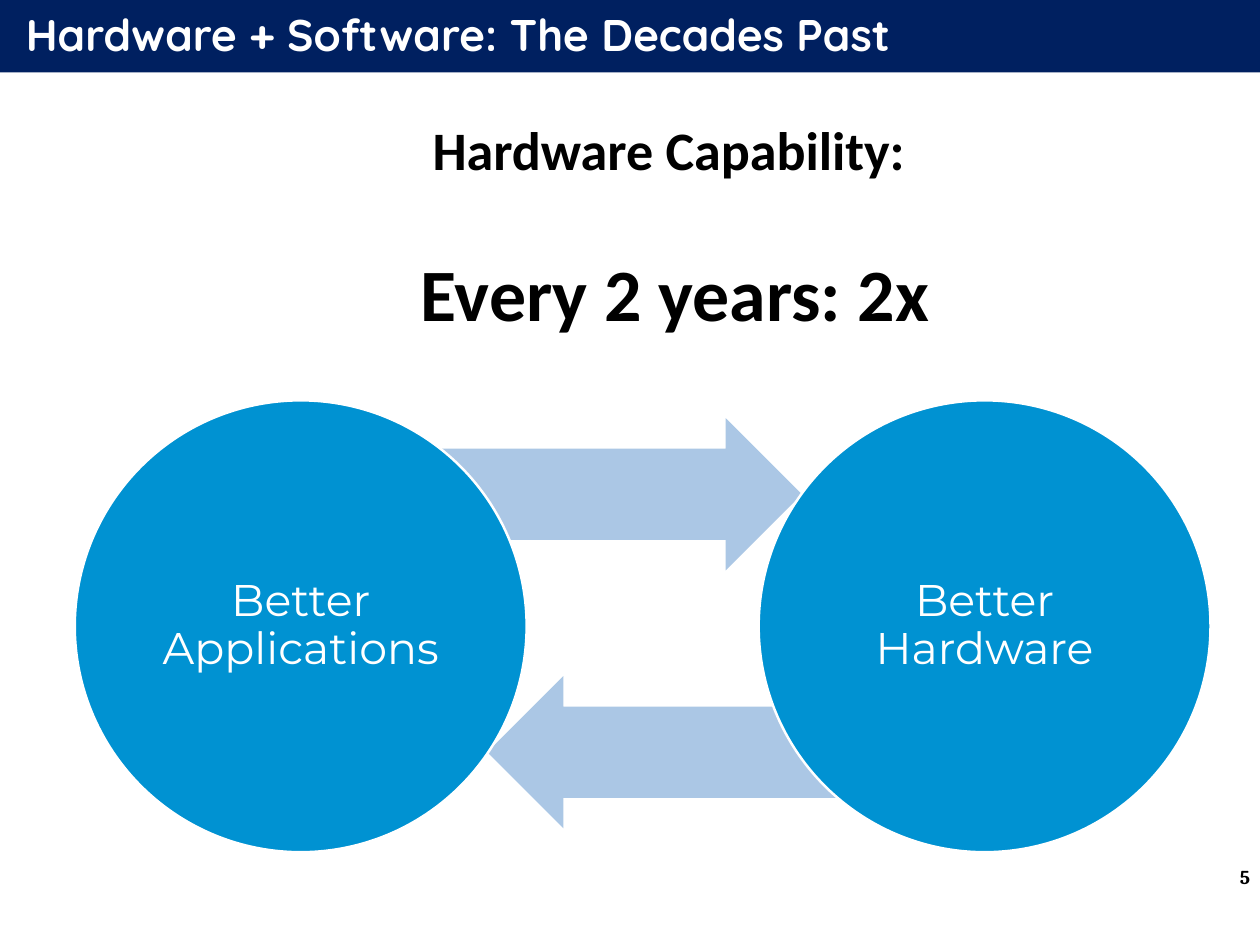
from dataclasses import dataclass

from pptx import Presentation
from pptx.dml.color import RGBColor
from pptx.enum.shapes import MSO_SHAPE
from pptx.enum.text import MSO_ANCHOR, MSO_AUTO_SIZE, PP_ALIGN
from pptx.shapes.autoshape import Shape
from pptx.slide import Slide
from pptx.util import Pt

RECT, OVAL, ARROW = MSO_SHAPE.RECTANGLE, MSO_SHAPE.OVAL, MSO_SHAPE.RIGHT_ARROW
LEFT, CENTER, RIGHT = PP_ALIGN.LEFT, PP_ALIGN.CENTER, PP_ALIGN.RIGHT
MIDDLE = MSO_ANCHOR.MIDDLE
GROW = MSO_AUTO_SIZE.SHAPE_TO_FIT_TEXT


@dataclass(frozen=True)
class Font:
    name: str
    size: float
    color: str
    bold: bool = True


@dataclass(frozen=True)
class Theme:
    navy: str = "002060"
    blue: str = "0092D2"
    pale: str = "ABC7E5"
    white: str = "FFFFFF"
    title: Font = Font("Quicksand", 36, "FFFFFF")
    label: Font = Font("Montserrat", 36, "FFFFFF", False)
    head: Font = Font("Calibri", 44, "000000")
    claim: Font = Font("Calibri", 60, "000000")
    number: Font = Font("Cambria", 16, "000000")


@dataclass(frozen=True)
class Box:
    left: float
    top: float
    width: float
    height: float

    def lengths(self) -> list[Pt]:
        return [Pt(v) for v in (self.left, self.top, self.width, self.height)]


@dataclass(frozen=True)
class Stage:
    text: str
    left: float


@dataclass(frozen=True)
class Flow:
    box: Box
    turn: float


THEME = Theme()
STAGES = [Stage("Better Applications", 60.8), Stage("Better Hardware", 616.6)]
FLOWS = [
    Flow(Box(283.7, 339.8, 367.9, 123.8), 0),
    Flow(Box(396, 549.4, 325.4, 123.8), 180),
]
RING_TOP, RING_SIZE = 325.4, 367.2


def add_solid(slide: Slide, kind: MSO_SHAPE, box: Box, color: str) -> Shape:
    """Add a filled preset shape without outline or shadow."""
    shape = slide.shapes.add_shape(kind, *box.lengths())
    shape.shadow.inherit = False
    shape.fill.solid()
    shape.fill.fore_color.rgb = RGBColor.from_string(color)
    shape.line.fill.background()
    return shape


def write(shape: Shape, lines: list[str], fonts: list[Font], align: PP_ALIGN) -> None:
    """Set one paragraph per line, each in its own font."""
    frame = shape.text_frame
    frame.text = "\n".join(lines)
    frame.vertical_anchor = MIDDLE
    for para, style in zip(frame.paragraphs, fonts):
        para.alignment = align
        for run in para.runs:
            font = run.font
            font.name, font.size, font.bold = style.name, Pt(style.size), style.bold
            font.color.rgb = RGBColor.from_string(style.color)


def set_insets(shape: Shape, side: float, left: float) -> None:
    frame = shape.text_frame
    frame.margin_left = Pt(left)
    frame.margin_top = frame.margin_right = frame.margin_bottom = Pt(side)


def add_flow(slide: Slide, flow: Flow) -> None:
    arrow = add_solid(slide, ARROW, flow.box, THEME.pale)
    arrow.adjustments[0], arrow.adjustments[1] = 0.6, 0.5
    arrow.rotation = flow.turn


def add_title(slide: Slide, text: str) -> None:
    bar = add_solid(slide, RECT, Box(0, -4.3, 1024, 63.2), THEME.navy)
    set_insets(bar, 0, 21)
    bar.text_frame.word_wrap = True
    write(bar, [text], [THEME.title], LEFT)


def add_stage(slide: Slide, stage: Stage) -> None:
    box = Box(stage.left, RING_TOP, RING_SIZE, RING_SIZE)
    ring = add_solid(slide, OVAL, box, THEME.blue)
    ring.line.color.rgb = RGBColor.from_string(THEME.white)
    ring.line.width = Pt(2)
    set_insets(ring, 3.6, 3.6)
    ring.text_frame.word_wrap = True
    write(ring, [stage.text], [THEME.label], CENTER)
    ring.text_frame.paragraphs[0].line_spacing = 0.9


def add_number(slide: Slide, text: str) -> None:
    box = slide.shapes.add_textbox(*Box(784, 692, 239, 41).lengths())
    box.text_frame.word_wrap = True
    write(box, [text], [THEME.number], RIGHT)


def add_claim(slide: Slide) -> None:
    box = slide.shapes.add_textbox(*Box(293.8, 91.4, 509.8, 186.5).lengths())
    lines = ["Hardware Capability: ", "Every 2 years: 2x"]
    write(box, lines, [THEME.head, THEME.claim], CENTER)
    frame = box.text_frame
    frame.word_wrap = False
    frame.auto_size = GROW
    frame.vertical_anchor = MSO_ANCHOR.TOP
    frame.paragraphs[1].space_before = Pt(53.7)


def main() -> None:
    deck = Presentation()
    deck.slide_width, deck.slide_height = Pt(1024), Pt(768)
    slide = deck.slides.add_slide(deck.slide_layouts[6])
    for flow in FLOWS:
        add_flow(slide, flow)
    add_title(slide, "Hardware + Software: The Decades Past")
    add_number(slide, "5")
    for stage in STAGES:
        add_stage(slide, stage)
    add_claim(slide)
    deck.save("out.pptx")


if __name__ == "__main__":
    main()
